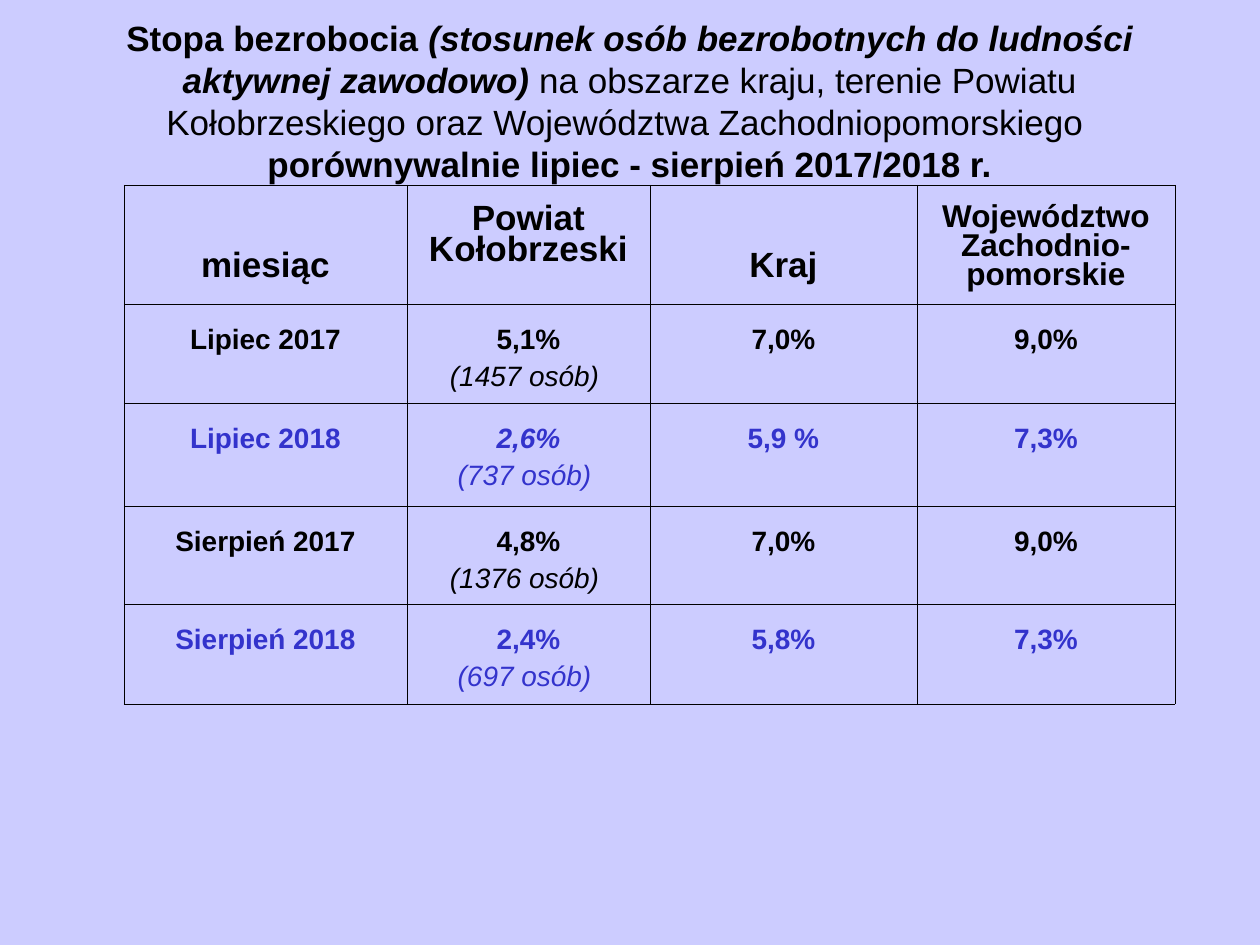
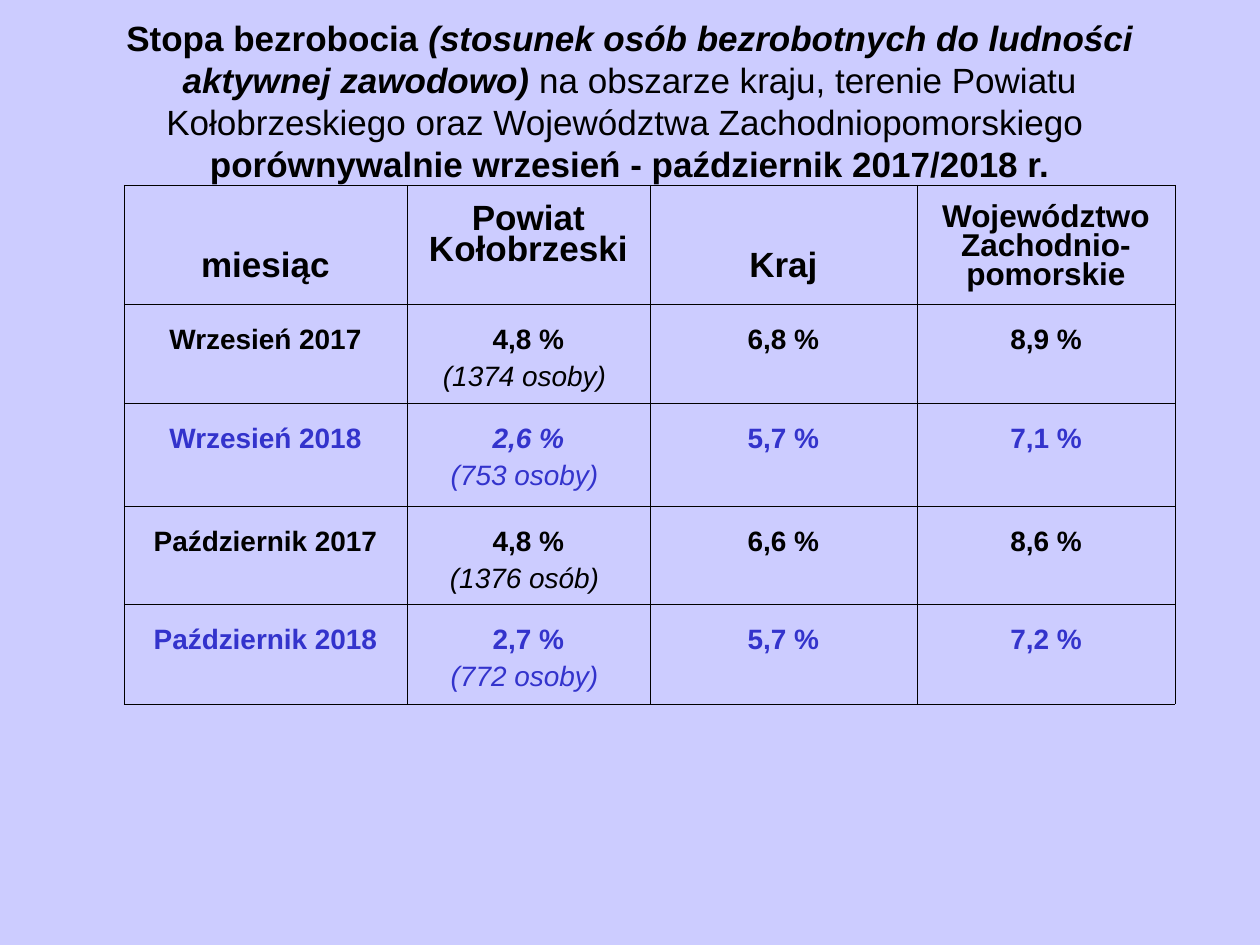
from dataclasses import dataclass
from lxml.etree import SubElement
from pptx import Presentation
from pptx.dml.color import RGBColor
from pptx.enum.text import MSO_ANCHOR, PP_ALIGN
from pptx.oxml.ns import qn
from pptx.util import Pt


@dataclass(frozen=True)
class Theme:
    """Colours, font, type sizes and line widths of the deck."""
    back: str = "CCCCFF"
    ink: str = "000000"
    blue: str = "3333CC"
    font: str = "Arial"
    head: int = 20
    small: int = 18
    body: int = 16
    outer: float = 0.23
    inner: float = 0.11


THEME = Theme()
WIDE, HIGH = 720, 540
TITLE = (36, 9.36, 648, 96.5)
TABLE = (70.9, 105.7)
COLS = (161.6, 138.9, 152.6, 147.5)
ROWS = (68, 56.6, 58.8, 55.4, 57.2)
HEADS = (
    ("miesiąc", THEME.head, 38.4),
    ("Powiat Kołobrzeski", THEME.head, 11.5),
    ("Kraj", THEME.head, 38.4),
    ("Województwo Zachodnio-pomorskie", THEME.small, 11.5),
)
PAGES = (
    ("lipiec - sierpień", (
        ("Lipiec 2017", "5,1%\n(1457 osób) ", "7,0%", "9,0%"),
        ("Lipiec 2018", "2,6%\n(737 osób) ", "5,9 %", "7,3%"),
        ("Sierpień 2017", "4,8%\n(1376 osób) ", "7,0%", "9,0%"),
        ("Sierpień 2018", "2,4%\n(697 osób) ", "5,8%", "7,3%"),
    )),
    ("wrzesień - październik", (
        ("Wrzesień 2017", "4,8 %\n(1374 osoby) ", "6,8 %", "8,9 %"),
        ("Wrzesień 2018", "2,6 %\n(753 osoby) ", "5,7 %", "7,1 %"),
        ("Październik 2017", "4,8 %\n(1376 osób) ", "6,6 %", "8,6 %"),
        ("Październik 2018", "2,7 %\n(772 osoby) ", "5,7 %", "7,2 %"),
    )),
)


def style(run, size, bold=True, slant=False, tint=THEME.ink):
    """Format one run."""
    font = run.font
    font.name, font.size = THEME.font, Pt(size)
    font.bold, font.italic = bold, slant
    font.color.rgb = RGBColor.from_string(tint)


def add_title(slide, box, months):
    """Write the title that names the compared months."""
    frame = slide.shapes.add_textbox(*map(Pt, box)).text_frame
    frame.word_wrap = True
    frame.vertical_anchor = MSO_ANCHOR.MIDDLE
    para = frame.paragraphs[0]
    para.alignment = PP_ALIGN.CENTER
    parts = (
        ("Stopa bezrobocia ", True, False),
        ("(stosunek osób bezrobotnych do ludności aktywnej zawodowo)", True, True),
        (" na obszarze kraju, terenie Powiatu Kołobrzeskiego"
         " oraz Województwa Zachodniopomorskiego ", False, False),
        (f"porównywalnie {months} 2017/2018 r.", True, False),
    )
    for part in parts:
        text, bold, slant = part
        if part is parts[-1]:
            para.add_line_break()
        run = para.add_run()
        run.text = text
        style(run, THEME.head, bold, slant)


def rule(cell, row, col):
    """Draw the four borders of a cell and clear its fill."""
    cell.fill.background()
    props = cell._tc.get_or_add_tcPr()
    edges = {
        "L": col == 0, "R": col == len(COLS) - 1,
        "T": row == 0, "B": False,
    }
    for spot, (side, rim) in enumerate(edges.items()):
        width = THEME.outer if rim else THEME.inner
        line = SubElement(props, qn(f"a:ln{side}"), w=str(Pt(width)))
        fill = SubElement(line, qn("a:solidFill"))
        SubElement(fill, qn("a:srgbClr"), val=THEME.ink)
        props.insert(spot, line)


def fill_cell(cell, text, size, top, gap, tint=THEME.ink, slant=False):
    """Set a cell's text, with any second line light and slanted."""
    cell.margin_top = Pt(top)
    cell.text_frame.text = text
    for num, para in enumerate(cell.text_frame.paragraphs):
        para.alignment = PP_ALIGN.CENTER
        para.line_spacing, para.space_before = 0.81, Pt(gap)
        for run in para.runs:
            style(run, size, num == 0, slant or num > 0, tint)


def add_rates(slide, spot, rates):
    """Build the table of rates, with the later year in blue."""
    box = (*spot, sum(COLS), sum(ROWS))
    table = slide.shapes.add_table(len(ROWS), len(COLS), *map(Pt, box)).table
    table.first_row = table.horz_banding = False
    for col, width in zip(table.columns, COLS):
        col.width = Pt(width)
    for row, height in zip(table.rows, ROWS):
        row.height = Pt(height)
    for col, (text, size, top) in enumerate(HEADS):
        fill_cell(table.cell(0, col), text, size, top, 5)
    for row, texts in enumerate(rates, 1):
        tint = THEME.ink if row % 2 else THEME.blue
        for col, text in enumerate(texts):
            slant = (row, col) == (2, 1)
            fill_cell(table.cell(row, col), text, THEME.body, 14.4, 7, tint, slant)
    for row in range(len(ROWS)):
        for col in range(len(COLS)):
            rule(table.cell(row, col), row, col)


def add_page(deck, months, rates):
    """Add one slide that compares two months over two years."""
    slide = deck.slides.add_slide(deck.slide_layouts[6])
    fill = slide.background.fill
    fill.solid()
    fill.fore_color.rgb = RGBColor.from_string(THEME.back)
    add_title(slide, TITLE, months)
    add_rates(slide, TABLE, rates)


def main():
    """Build and save the deck."""
    deck = Presentation()
    deck.slide_width, deck.slide_height = Pt(WIDE), Pt(HIGH)
    for months, rates in PAGES:
        add_page(deck, months, rates)
    deck.save("out.pptx")


if __name__ == "__main__":
    main()
